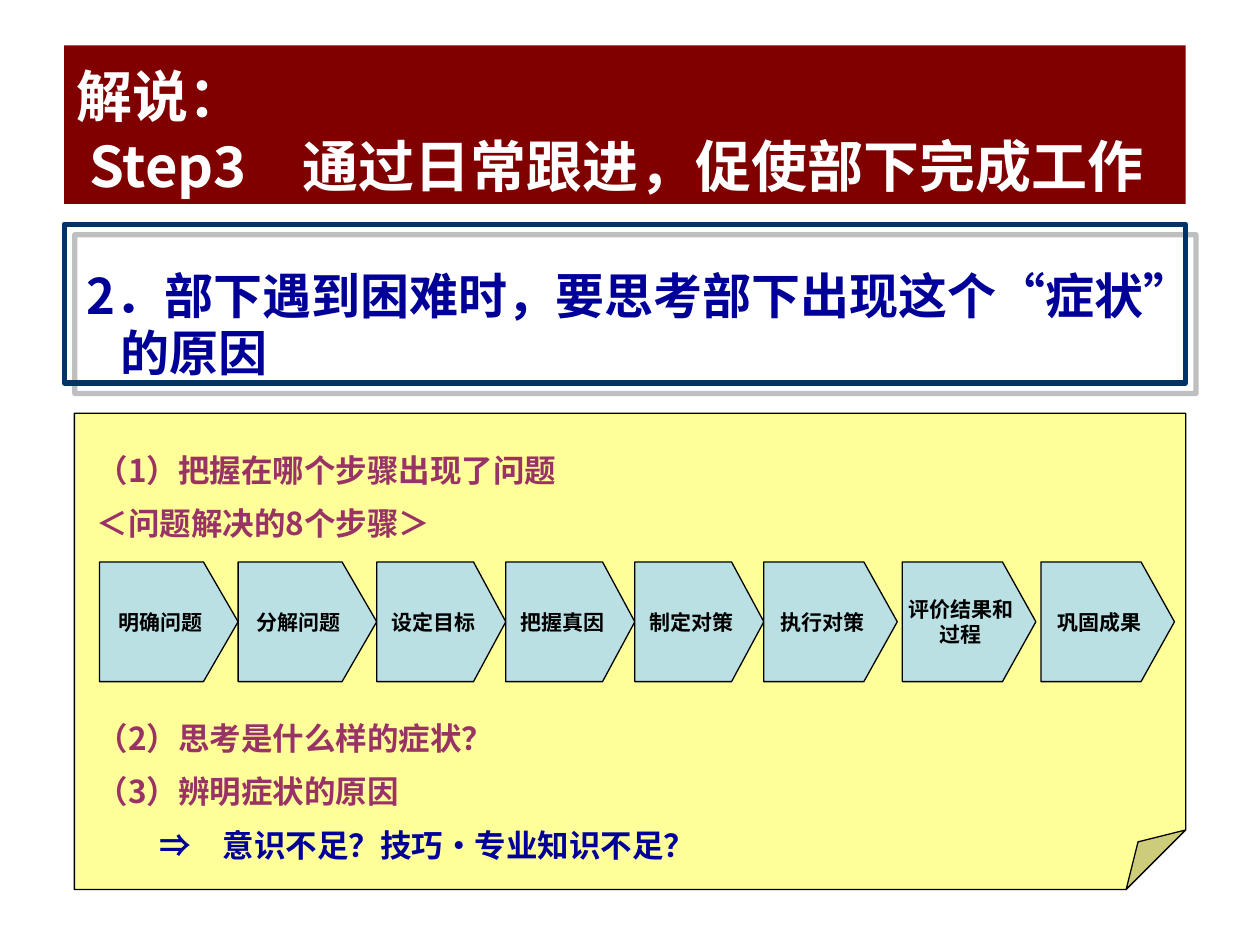
import lxml.etree
import pptx
import pptx.dml.color
import pptx.enum.shapes
import pptx.enum.text
import pptx.oxml.ns
import pptx.util

COLORS = {
    "banner": "800000", "white": "FFFFFF", "frame": "003366", "shade": "808080",
    "heading": "000099", "note": "FFFF99", "item": "993366",
    "step": "BBE0E3", "black": "000000",
}
FONT = "Noto Sans CJK SC"
COLUMNS, ROWS = 100, 75
SHAPES = pptx.enum.shapes.MSO_SHAPE
ALIGN = pptx.enum.text.PP_ALIGN
ANCHOR = pptx.enum.text.MSO_ANCHOR


def rgb(name):
    return pptx.dml.color.RGBColor.from_string(COLORS[name])


def write(para, text, size=18, color="black", font=FONT):
    """Add one bold span of text to a paragraph."""
    span = para.add_run()
    span.text = text
    span.font.size = pptx.util.Pt(size)
    span.font.bold = True
    span.font.name = font
    span.font.color.rgb = rgb(color)
    east = lxml.etree.SubElement(span._r.get_or_add_rPr(), pptx.oxml.ns.qn("a:ea"))
    east.set("typeface", FONT)


def set_indent(para, left, first=0):
    """Indent a paragraph, in inches."""
    properties = para._p.get_or_add_pPr()
    properties.set("marL", str(pptx.util.Inches(left)))
    properties.set("indent", str(pptx.util.Inches(first)))


def set_fold(shape, share):
    """Set the size of a folded corner, which has no public adjustment."""
    qn = pptx.oxml.ns.qn
    guides = shape._element.spPr.find(qn("a:prstGeom")).find(qn("a:avLst"))
    lxml.etree.SubElement(guides, qn("a:gd"), name="adj",
                          fmla=f"val {round(share * 100000)}")


def add_shadow(shape, color, distance, angle, alpha):
    """Give a shape an offset shadow; distance in points, angle in degrees."""
    qn = pptx.oxml.ns.qn
    effects = shape._element.spPr.find(qn("a:effectLst"))
    shadow = lxml.etree.SubElement(effects, qn("a:outerShdw"))
    shadow.set("dist", str(pptx.util.Pt(distance)))
    shadow.set("dir", str(angle * 60000))
    shadow.set("algn", "ctr")
    shadow.set("rotWithShape", "0")
    tone = lxml.etree.SubElement(shadow, qn("a:srgbClr"), val=COLORS[color])
    lxml.etree.SubElement(tone, qn("a:alpha"), val=str(alpha * 1000))


class SlideBuilder:
    """Places elements on a grid of COLUMNS by ROWS."""

    def __init__(self, deck):
        self.column = deck.slide_width / COLUMNS
        self.row = deck.slide_height / ROWS
        self.page = deck.slides.add_slide(deck.slide_layouts[6])

    def place(self, left, top, width, height):
        return (round(left * self.column), round(top * self.row),
                round(width * self.column), round(height * self.row))

    def shape(self, kind, area, fill=None, line=None, weight=0.75):
        shape = self.page.shapes.add_shape(kind, *self.place(*area))
        shape.shadow.inherit = False
        if fill:
            shape.fill.solid()
            shape.fill.fore_color.rgb = rgb(fill)
        else:
            shape.fill.background()
        if line:
            shape.line.color.rgb = rgb(line)
            shape.line.width = pptx.util.Pt(weight)
        else:
            shape.line.fill.background()
        return shape

    def text_box(self, area):
        box = self.page.shapes.add_textbox(*self.place(*area))
        box.text_frame.word_wrap = True
        return box

    def paragraphs(self, box, lines, pitch, align=ALIGN.LEFT, before=(), **style):
        """Fill a box with paragraphs; pitch and space before are in points."""
        frame = box.text_frame
        for index, line in enumerate(lines):
            para = frame.add_paragraph() if index else frame.paragraphs[0]
            para.alignment = align
            para.line_spacing = pptx.util.Pt(pitch)
            if before and index:
                para.space_before = pptx.util.Pt(before[index])
            write(para, line, **style)

    def step(self, left, top, width, height, lines):
        arrow = self.shape(SHAPES.PENTAGON, (left, top, width, height), "step", "black")
        arrow.adjustments[0] = width / height / 4
        arrow.text_frame.word_wrap = False
        arrow.text_frame.vertical_anchor = ANCHOR.MIDDLE
        self.paragraphs(arrow, lines, 14.4, ALIGN.CENTER, size=12)


def main():
    deck = pptx.Presentation()
    deck.slide_width = pptx.util.Inches(10)
    deck.slide_height = pptx.util.Inches(7.5)
    builder = SlideBuilder(deck)

    # Framed heading with a hanging second line
    frame = builder.shape(SHAPES.RECTANGLE, (5.1, 17.8, 89, 12.6), None, "frame", 3)
    add_shadow(frame, "shade", 8.5, 45, 50)
    heading = builder.text_box((5.9, 20.7, 94.1, 10.3))
    para = heading.text_frame.paragraphs[0]
    para.line_spacing = pptx.util.Pt(32.6)
    set_indent(para, 0.27, -0.27)
    for text, font in (("2．部下遇到困难时，要思考部下出现这个", FONT),
                       ("“", "Arial"), ("症状", FONT), ("”", "Arial")):
        write(para, text, size=28, color="heading", font=font)
    para.add_line_break()
    write(para, "的原因", size=28, color="heading")

    # Note with its list; the wide gap leaves room for the steps
    note = builder.shape(SHAPES.FOLDED_CORNER, (5.9, 32.8, 88.2, 37.8), "note", "black")
    set_fold(note, 0.125)
    items = builder.text_box((6.7, 35.3, 63.8, 35.6))
    gap, pitch = 9, 21.6
    builder.paragraphs(
        items,
        ["（1）把握在哪个步骤出现了问题", "＜问题解决的8个步骤＞",
         "（2）思考是什么样的症状？", "（3）辨明症状的原因"],
        pitch, before=(0, gap, 4 * gap + 3 * pitch, gap), color="item")
    para = items.text_frame.add_paragraph()
    para.line_spacing = pptx.util.Pt(pitch)
    para.space_before = pptx.util.Pt(gap)
    set_indent(para, 0.5)
    write(para, "⇒　意识不足？技巧・专业知识不足？", color="heading")

    # Eight steps in a row: width, gap after, lines
    steps = [
        (11, 0, ["明确问题"]), (11, 0, ["分解问题"]),
        (10.24, 0, ["设定目标"]), (10.24, 0, ["把握真因"]), (10.24, 0, ["制定对策"]),
        (10.6, 0.4, ["执行对策"]), (10.6, 0.4, ["评价结果和", "过程"]),
        (10.6, 0, ["巩固成果"]),
    ]
    left = 7.9
    for width, space, lines in steps:
        builder.step(left, 44.6, width, 9.5, lines)
        left += width + space

    # Title banner
    banner = builder.shape(SHAPES.RECTANGLE, (5.1, 3.6, 89, 12.6), "banner")
    banner.text_frame.word_wrap = True
    banner.text_frame.vertical_anchor = ANCHOR.MIDDLE
    banner.text_frame.margin_top = pptx.util.Inches(0.12)
    builder.paragraphs(banner, ["解说：", " Step3　通过日常跟进，促使部下完成工作"],
                       40, size=32, color="white")

    deck.save("out.pptx")


if __name__ == "__main__":
    main()
